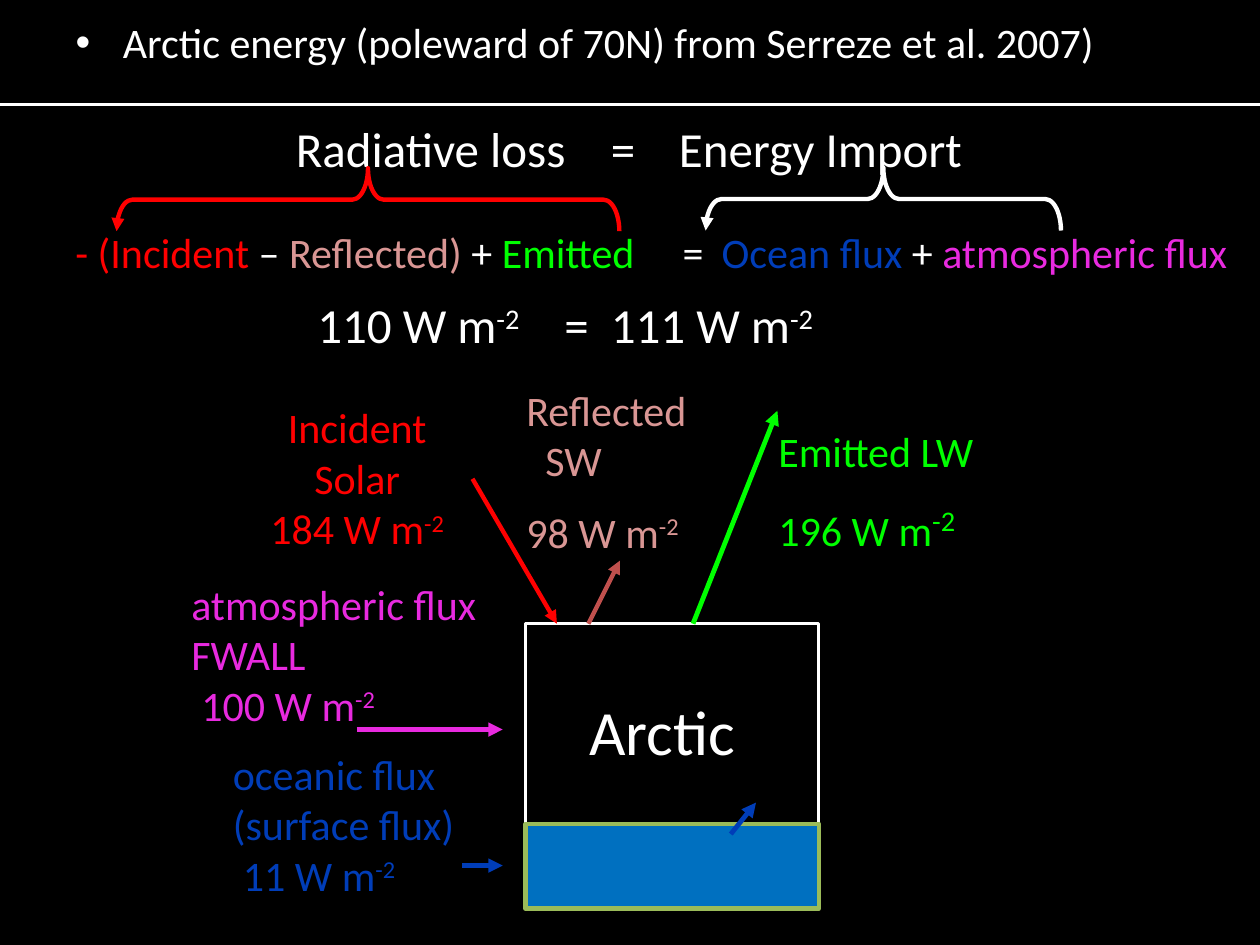
from dataclasses import dataclass
from typing import Optional

import pptx
import pptx.dml.color
import pptx.enum.shapes
import pptx.enum.text
import pptx.oxml
import pptx.oxml.ns
import pptx.util

Inches = pptx.util.Inches
Pt = pptx.util.Pt
RGBColor = pptx.dml.color.RGBColor
Shape = pptx.enum.shapes.MSO_SHAPE
CENTER = pptx.enum.text.PP_ALIGN.CENTER

BLACK = RGBColor(0x00, 0x00, 0x00)
WHITE = RGBColor(0xFF, 0xFF, 0xFF)
RED = RGBColor(0xFF, 0x00, 0x00)
ROSE = RGBColor(0xD9, 0x96, 0x94)
BRICK = RGBColor(0xC0, 0x50, 0x4D)
GREEN = RGBColor(0x00, 0xFF, 0x00)
BLUE = RGBColor(0x00, 0x3D, 0xB8)
MAGENTA = RGBColor(0xE8, 0x2A, 0xDF)
OCEAN = RGBColor(0x00, 0x70, 0xC0)
OLIVE = RGBColor(0x9B, 0xBB, 0x59)


@dataclass
class Span:
    text: str
    color: Optional[RGBColor] = None
    raised: bool = False
    size: Optional[float] = None


@dataclass
class Line:
    spans: list
    before: float = 0
    indent: float = 0


@dataclass
class Label:
    place: tuple
    color: RGBColor
    lines: list
    size: float = 24
    centered: bool = False
    tabs: tuple = ()


@dataclass
class Arrow:
    start: tuple
    end: tuple
    color: RGBColor
    width: float = 2.75
    head: bool = True


@dataclass
class Brace:
    place: tuple
    color: RGBColor


@dataclass
class Block:
    kind: Shape
    place: tuple
    fill: RGBColor
    outline: RGBColor
    width: float


def plain(text: str, indent: float = 0) -> Line:
    return Line([Span(text)], indent=indent)


def flux(amount: str, before: float = 0, indent: float = 0, power_size: Optional[float] = None) -> Line:
    """A value in W m-2 with its exponent raised."""
    return Line([Span(f"{amount} W m"), Span("-2", raised=True, size=power_size)], before, indent)


BLOCKS = [
    Block(Shape.RECTANGLE, (4.17, 4.95, 2.33, 2.25), BLACK, WHITE, 1.75),
    Block(Shape.FLOWCHART_PROCESS, (4.17, 6.54, 2.33, 0.67), OCEAN, OLIVE, 2.5),
]

BRACES = [
    Brace((2.67, -0.41, 0.5, 3.99), RED),
    Brace((6.76, 0.17, 0.5, 2.82), WHITE),
]

LABELS = [
    Label((0.5, 1.75, 9.5, 0.5), WHITE, [Line([
        Span("- (Incident ", RED), Span("– "), Span("Reflected)", ROSE), Span(" + "),
        Span("Emitted", GREEN), Span("\t=\t"), Span("Ocean flux ", BLUE), Span("+ "),
        Span("atmospheric flux", MAGENTA)])], tabs=(4.82, 5.13)),
    Label((2.25, 0.89, 6.92, 0.57), WHITE, [plain("Radiative loss\t=\tEnergy Import")],
          size=28, tabs=(2.5, 3.04)),
    Label((2.42, 2.29, 6.92, 0.57), WHITE, [Line([
        Span("110 W m"), Span("-2", raised=True), Span("\t=\t111 W m"),
        Span("-2", raised=True)])], size=28, tabs=(1.96, 2.33)),
    Label((4.08, 3, 1.83, 2.12), ROSE,
          [plain("Reflected"), plain("SW", indent=0.15), flux("98", before=12)]),
    Label((4.58, 5.45, 1.83, 0.7), WHITE, [plain("Arctic")], size=36),
    Label((1.75, 3.14, 2.17, 1.31), RED,
          [plain("Incident"), plain("Solar"), flux("184")], centered=True),
    Label((6.08, 3.33, 2.17, 1.11), GREEN,
          [plain("Emitted LW"), flux("196", before=12, power_size=28)]),
    Label((1.42, 4.54, 2.66, 1.31), MAGENTA,
          [plain("atmospheric flux"), plain("FWALL"), flux("100", indent=0.08)]),
    Label((1.75, 5.89, 2.66, 1.31), BLUE,
          [plain("oceanic flux (surface flux)"), flux("11", indent=0.08)]),
]

ARROWS = [
    Arrow((0, 0.83), (10, 0.83), WHITE, 1.75, head=False),
    Arrow((3.75, 3.8), (4.42, 4.95), RED, 2.5),
    Arrow((4.67, 4.95), (4.92, 4.45), BRICK, 2.5),
    Arrow((5.5, 4.95), (6.17, 3.26), GREEN),
    Arrow((2.83, 5.79), (3.99, 5.79), MAGENTA),
    Arrow((3.67, 6.87), (3.99, 6.87), BLUE),
    Arrow((5.8, 6.62), (6, 6.37), BLUE),
]


def add_child(parent, tag: str, **attributes):
    child = pptx.oxml.parse_xml(f"<{tag} {pptx.oxml.ns.nsdecls('a')}/>")
    for name, value in attributes.items():
        child.set(name, str(value))
    parent.append(child)
    return child


def apply_format(target, values: dict) -> None:
    for name, value in values.items():
        setattr(target, name, value)


def style_line(shape, color: RGBColor, width: float, head: bool = False) -> None:
    shape.line.color.rgb = color
    shape.line.width = Pt(width)
    if head:
        add_child(shape.line._get_or_add_ln(), "a:tailEnd", type="triangle")


def write_span(para, span: Span, color: RGBColor, size: float) -> None:
    run = para.add_run()
    run.text = span.text
    apply_format(run.font, {"name": "Calibri", "size": Pt(span.size or size)})
    run.font.color.rgb = span.color or color
    if span.raised:
        run._r.get_or_add_rPr().set("baseline", "30000")


def draw_label(page, label: Label) -> None:
    box = page.shapes.add_textbox(*map(Inches, label.place))
    frame = box.text_frame
    frame.word_wrap = True
    for index, line in enumerate(label.lines):
        para = frame.add_paragraph() if index else frame.paragraphs[0]
        para.space_before = Pt(line.before)
        if label.centered:
            para.alignment = CENTER
        properties = para._p.get_or_add_pPr()
        if line.indent:
            properties.set("marL", str(Inches(line.indent)))
        if label.tabs:
            stops = add_child(properties, "a:tabLst")
            for position in label.tabs:
                add_child(stops, "a:tab", pos=Inches(position), algn="l")
        for span in line.spans:
            write_span(para, span, label.color, label.size)


def draw_block(page, block: Block) -> None:
    shape = page.shapes.add_shape(block.kind, *map(Inches, block.place))
    shape.shadow.inherit = False
    shape.fill.solid()
    shape.fill.fore_color.rgb = block.fill
    style_line(shape, block.outline, block.width)


def draw_brace(page, brace: Brace) -> None:
    shape = page.shapes.add_shape(Shape.LEFT_BRACE, *map(Inches, brace.place))
    shape.shadow.inherit = False
    shape.fill.background()
    shape.adjustments[0] = 0.25
    shape.rotation = 270
    shape._element.spPr.xfrm.set("flipH", "1")
    style_line(shape, brace.color, 2.5, head=True)


def draw_arrow(page, arrow: Arrow) -> None:
    connector = page.shapes.add_connector(
        pptx.enum.shapes.MSO_CONNECTOR.STRAIGHT, *map(Inches, arrow.start + arrow.end))
    style_line(connector, arrow.color, arrow.width, arrow.head)
    add_child(connector._element.spPr, "a:effectLst")


def write_heading(page) -> None:
    body = page.placeholders[1]
    places = map(Inches, (0.5, 0.08, 9, 1.83))
    apply_format(body, dict(zip(("left", "top", "width", "height"), places)))
    para = body.text_frame.paragraphs[0]
    para.space_before = Pt(0)
    write_span(para, Span("Arctic energy (poleward of 70N) from Serreze et al. 2007)"), WHITE, 24)


def main() -> None:
    deck = pptx.Presentation()
    apply_format(deck, {"slide_width": Inches(10), "slide_height": Inches(7.5)})
    page = deck.slides.add_slide(deck.slide_layouts[1])
    page.background.fill.solid()
    page.background.fill.fore_color.rgb = BLACK
    title = page.shapes.title._element
    title.getparent().remove(title)
    write_heading(page)
    for draw, items in ((draw_block, BLOCKS), (draw_label, LABELS),
                        (draw_brace, BRACES), (draw_arrow, ARROWS)):
        for item in items:
            draw(page, item)
    deck.save("out.pptx")


if __name__ == "__main__":
    main()
